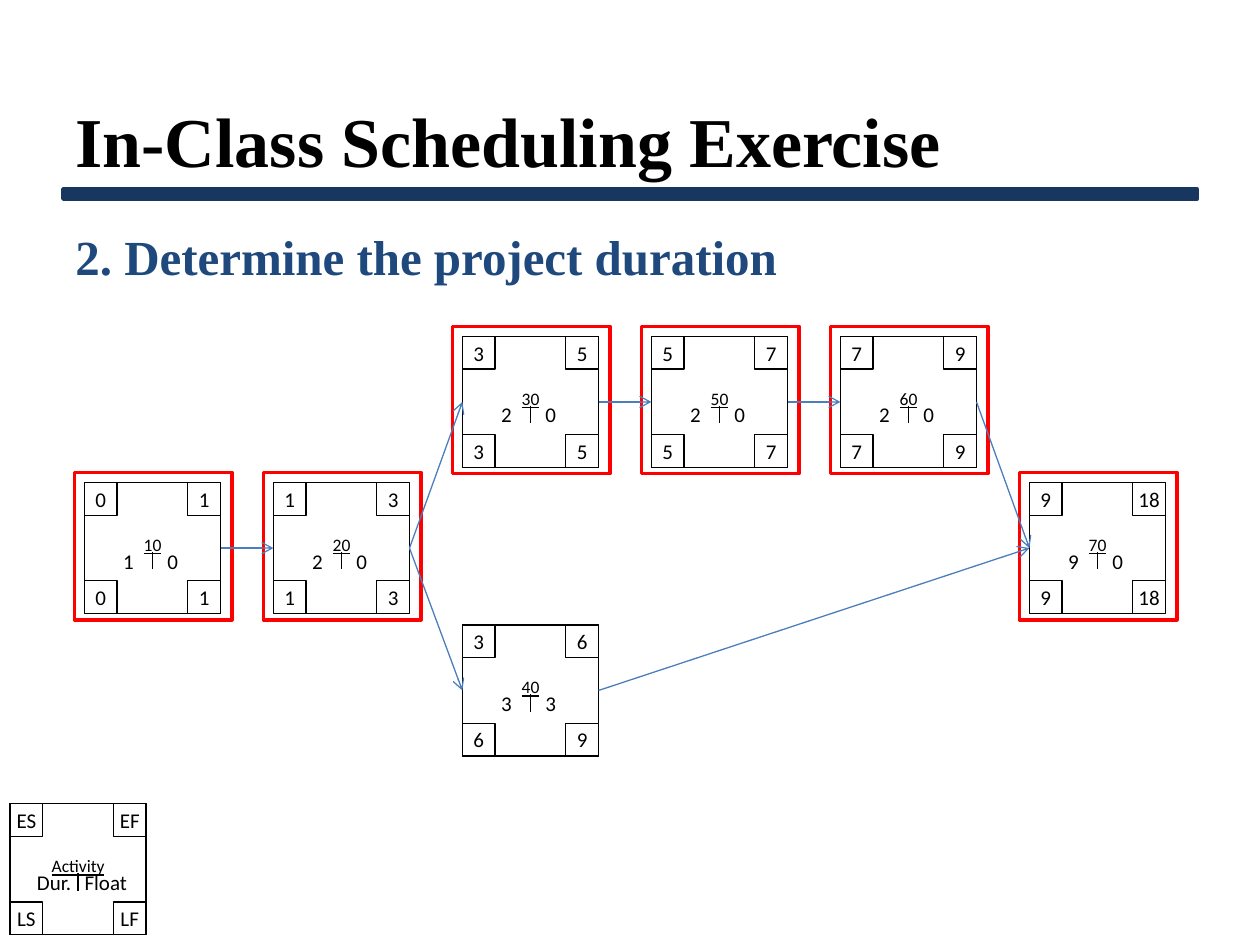
from lxml import etree
from pptx import Presentation
from pptx.dml.color import RGBColor
from pptx.enum.shapes import MSO_CONNECTOR, MSO_SHAPE
from pptx.enum.text import MSO_ANCHOR, PP_ALIGN
from pptx.oxml.ns import qn
from pptx.util import Inches, Pt

RECT = MSO_SHAPE.RECTANGLE
LINE = MSO_CONNECTOR.STRAIGHT
MID, TOP = MSO_ANCHOR.MIDDLE, MSO_ANCHOR.TOP
LEFT, CENTER = PP_ALIGN.LEFT, PP_ALIGN.CENTER
WIDE, HIGH = 10, 7.5

COLORS = {
    "ink": "000000", "paper": "FFFFFF", "bar": "17375E",
    "head": "1F497D", "arrow": "4B7EBC", "mark": "FF0000",
}
TITLE = "In-Class Scheduling Exercise"
STEP = "2. Determine the project duration"
TASKS = {
    "10": (0, 1, ("0", "1", "0", "1"), "1", "0"),
    "20": (1, 1, ("1", "3", "1", "3"), "2", "0"),
    "30": (2, 0, ("3", "5", "3", "5"), "2", "0"),
    "40": (2, 2, ("3", "6", "6", "9"), "3", "3"),
    "50": (3, 0, ("5", "7", "5", "7"), "2", "0"),
    "60": (4, 0, ("7", "9", "7", "9"), "2", "0"),
    "70": (5, 1, ("9", "18", "9", "18"), "9", "0"),
}
LINKS = [("10", "20"), ("20", "30"), ("20", "40"), ("30", "50"),
         ("50", "60"), ("60", "70"), ("40", "70")]
KEY = ("Activity", ("ES", "EF", "LS", "LF"), "Dur.", "Float")

GRID_X, PITCH = 0.67, 1.5
ROWS = (2.67, 3.83, 4.96)
BOX_W, BOX_H, CELL = 1.08, 1.04, 0.26
WORD_W = 0.4
PAD, MARK_W, MARK_H = 0.08, 1.25, 1.17


def color(name):
    return RGBColor.from_string(COLORS[name])


def write(shape, text, size, font="Calibri", tint="ink", bold=False,
          align=CENTER, anchor=MID, wrap=False, inset=(0, 0)):
    frame = shape.text_frame
    frame.word_wrap = wrap
    frame.vertical_anchor = anchor
    frame.margin_left = frame.margin_right = Inches(inset[0])
    frame.margin_top = frame.margin_bottom = Inches(inset[1])
    frame.text = text
    para = frame.paragraphs[0]
    para.alignment = align
    face = para.runs[0].font
    face.name, face.size, face.bold = font, Pt(size), bold
    face.color.rgb = color(tint)
    return para


def rect(shapes, at, fill=None, line="ink", width=0.75):
    shape = shapes.add_shape(RECT, *map(Inches, at))
    shape.shadow.inherit = False
    if fill:
        shape.fill.solid()
        shape.fill.fore_color.rgb = color(fill)
    else:
        shape.fill.background()
    shape.line.color.rgb = color(line)
    shape.line.width = Pt(width)
    return shape


def label(shapes, at, text, size=12, **style):
    return write(shapes.add_textbox(*map(Inches, at)), text, size, **style)


def join(shapes, ends, tint):
    line = shapes.add_connector(LINE, *map(Inches, ends))
    line.line.color.rgb = color(tint)
    line.line.width = Pt(0.75)
    etree.SubElement(line._element.spPr, qn("a:effectLst"))
    return line


def node(shapes, x, y, name, times, span, slack, shift=0):
    parts = shapes.add_group_shape().shapes
    box = rect(parts, (x, y, BOX_W, BOX_H), "paper")
    for i, time in enumerate(times):
        left = x + i % 2 * (BOX_W - CELL)
        top = y + i // 2 * (BOX_H - CELL)
        write(rect(parts, (left, top, CELL, CELL), "paper"), time, 12)
    para = label(parts, (x, y + 0.36, BOX_W, 0.27), name, 10,
                 anchor=TOP, wrap=True, inset=(0.1, 0.05))
    para.runs[0].font.underline = True
    for word, mid in ((span, 0.35), (slack, 0.7 + shift)):
        label(parts, (x + mid - WORD_W / 2, y + 0.52, WORD_W, 0.2), word)
    mid = x + BOX_W / 2
    join(parts, (mid, y + 0.55, mid, y + 0.69), "ink")
    return box


def main():
    deck = Presentation()
    deck.slide_width, deck.slide_height = Inches(WIDE), Inches(HIGH)
    slide = deck.slides.add_slide(deck.slide_layouts[5])
    shapes = slide.shapes

    rect(shapes, (0.5, 1.5, 9, 0.08), "bar", "bar", 2)
    title = shapes.title
    title.left, title.top = Inches(0.5), Inches(0.67)
    title.width, title.height = Inches(9), Inches(0.88)
    prose = {"font": "Times New Roman", "bold": True, "align": LEFT,
             "wrap": True, "inset": (0.1, 0.05)}
    write(title, TITLE, 40, **prose)
    step = label(shapes, (0.5, 1.75, 9, 4.95), STEP, 28, tint="head",
                 anchor=TOP, **prose)
    step.space_before = Pt(5.6)

    name, times, span, slack = KEY
    node(shapes, 0.08, 6.38, name, times, span, slack, 0.06)
    boxes = {}
    for name, (col, row, times, span, slack) in TASKS.items():
        x, y = GRID_X + col * PITCH, ROWS[row]
        boxes[name] = node(shapes, x, y, name, times, span, slack)
        if slack == "0":
            rect(shapes, (x - PAD, y - PAD, MARK_W, MARK_H), None, "mark", 2)

    for start, end in LINKS:
        line = join(shapes, (0, 0, 0, 0), "arrow")
        line.begin_connect(boxes[start], 3)
        line.end_connect(boxes[end], 1)
        tip = etree.SubElement(line.line._get_or_add_ln(), qn("a:tailEnd"))
        tip.set("type", "arrow")

    deck.save("out.pptx")


if __name__ == "__main__":
    main()
